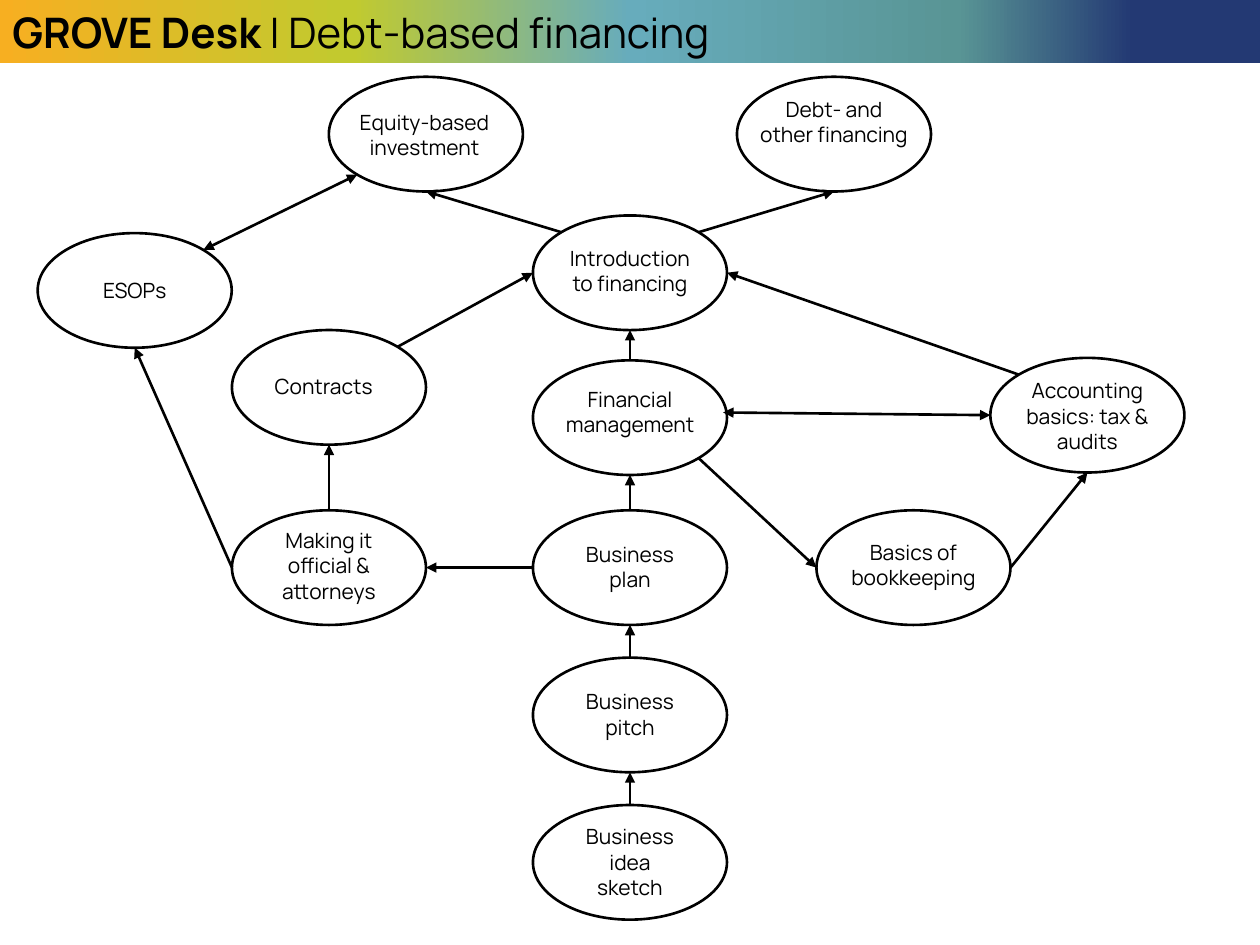
from copy import deepcopy
from math import sqrt

from lxml.etree import SubElement
from pptx import Presentation
from pptx.dml.color import RGBColor
from pptx.enum.shapes import MSO_CONNECTOR, MSO_SHAPE
from pptx.enum.text import MSO_ANCHOR, PP_ALIGN
from pptx.oxml.ns import qn
from pptx.util import Pt

SLIDE_W, SLIDE_H = 720, 540
OVAL_W, OVAL_H = 110.9, 65.5
LINE_H, INSET = 14.8, 3.6
INK = "000000"

HEADING = [("GROVE Desk ", True), ("| Debt-based financing", False)]
BAND = [(0, "F7AF21"), (0.28, "C1CA2F"), (0.5, "67ACBC"), (0.76, "599595"), (0.9, "233973")]

TOPICS = {
    "idea": ((360, 460), (360, 467.3, 71.3, 3), ["Business idea sketch"]),
    "pitch": ((360, 375.8), (360, 390.2, 71.3, 2), ["Business pitch"]),
    "plan": ((360, 291.6), (360, 306, 71.3, 2), ["Business plan"]),
    "intro": ((360, 123.1), (360, 136.8, 91.4, 2), ["Introduction to financing"]),
    "books": ((522, 291.6), (522, 304.6, 95.8, 2), ["Basics of bookkeeping"]),
    "official": ((188, 291.6), (188, 298.1, 83.5, 3), ["Making it official & attorneys"]),
    "accounting": ((621.4, 204.5), (621.4, 212.4, 91.4, 3), ["Accounting basics: tax & audits"]),
    "contracts": ((188, 188.6), (185, 210.2, 90.7, 1), ["Contracts"]),
    "equity": ((243.4, 43.9), (242.6, 59, 100.8, 2), ["Equity-based", "investment"]),
    "management": ((360, 205.9), (360, 217.4, 106.6, 2), ["Financial management"]),
    "debt": ((476.6, 43.9), (476.6, 51.8, 100.8, 3), ["Debt- and other financing"]),
    "esops": ((77, 133.2), (77, 154.8, 90.7, 1), ["ESOPs"]),
}

ONE_WAY, TWO_WAY = ("tailEnd",), ("headEnd", "tailEnd")
LINKS = [
    ("idea", "top", "pitch", "bottom", ONE_WAY),
    ("pitch", "top", "plan", "bottom", ONE_WAY),
    ("plan", "top", "management", "bottom", ONE_WAY),
    ("management", "top", "intro", "bottom", ONE_WAY),
    ("intro", "top right", "debt", "bottom", ONE_WAY),
    ("intro", "top left", "equity", "bottom", ONE_WAY),
    ("plan", "left", "official", "right", ONE_WAY),
    ("management", "bottom right", "books", "left", ONE_WAY),
    ("books", "right", "accounting", "bottom", ONE_WAY),
    ("official", "top", "contracts", "bottom", ONE_WAY),
    ("contracts", "top right", "intro", "left", ONE_WAY),
    ("accounting", "left", "management", "inner right", TWO_WAY),
    ("accounting", "top left", "intro", "right", ONE_WAY),
    ("equity", "bottom left", "esops", "top right", TWO_WAY),
    ("official", "left", "esops", "bottom", ONE_WAY),
]

DIAGONAL = 1 / sqrt(2)
SITES = {
    "top": (0, -1), "bottom": (0, 1), "left": (-1, 0), "right": (1, 0),
    "top left": (-DIAGONAL, -DIAGONAL), "top right": (DIAGONAL, -DIAGONAL),
    "bottom left": (-DIAGONAL, DIAGONAL), "bottom right": (DIAGONAL, DIAGONAL),
    "inner right": (0.96, -0.09),
}

FRAME = {"word_wrap": True, "margin_left": Pt(7.2), "margin_right": Pt(7.2),
         "margin_top": Pt(INSET), "margin_bottom": Pt(INSET)}
LABEL_FONT = {"name": "Manrope", "size": Pt(12), "bold": False}
HEADING_FONT = {"name": "Manrope", "size": Pt(24)}


def colour(value):
    return RGBColor.from_string(value)


def apply(target, values):
    for name, value in values.items():
        setattr(target, name, value)


def write(paragraph, wording, font):
    run = paragraph.add_run()
    run.text = wording
    apply(run.font, font)
    run.font.color.rgb = colour(INK)


def ink_line(line):
    line.color.rgb = colour(INK)
    line.width = Pt(1.5)


def add_heading(slide):
    band = slide.shapes.add_shape(MSO_SHAPE.RECTANGLE, 0, 0, Pt(SLIDE_W), Pt(36))
    band.shadow.inherit = False
    band.line.fill.background()
    band.fill.gradient()
    band.fill.gradient_angle = 0
    stops = band._element.spPr.find(qn("a:gradFill")).find(qn("a:gsLst"))
    for _ in range(len(BAND) - len(stops)):
        stops.append(deepcopy(stops[0]))
    for stop, (position, shade) in zip(band.fill.gradient_stops, BAND):
        stop.position = position
        stop.color.rgb = colour(shade)
    apply(band.text_frame, {**FRAME, "vertical_anchor": MSO_ANCHOR.MIDDLE})
    title = band.text_frame.paragraphs[0]
    title.alignment = PP_ALIGN.LEFT
    for wording, bold in HEADING:
        write(title, wording, {**HEADING_FONT, "bold": bold})


def add_topic(slide, oval_place, label_place, paragraphs):
    centre, top = oval_place
    oval = slide.shapes.add_shape(MSO_SHAPE.OVAL, Pt(centre - OVAL_W / 2), Pt(top),
                                  Pt(OVAL_W), Pt(OVAL_H))
    oval.shadow.inherit = False
    oval.fill.background()
    ink_line(oval.line)

    centre, top, width, lines = label_place
    label = slide.shapes.add_textbox(Pt(centre - width / 2), Pt(top), Pt(width),
                                     Pt(lines * LINE_H + 2 * INSET))
    apply(label.text_frame, FRAME)
    for index, wording in enumerate(paragraphs):
        paragraph = label.text_frame.add_paragraph() if index else label.text_frame.paragraphs[0]
        paragraph.alignment = PP_ALIGN.CENTER
        write(paragraph, wording, LABEL_FONT)


def site(topic, side):
    centre, top = TOPICS[topic][0]
    across, down = SITES[side]
    return Pt(centre + across * OVAL_W / 2), Pt(top + (1 + down) * OVAL_H / 2)


def add_link(slide, source, source_side, target, target_side, arrowheads):
    link = slide.shapes.add_connector(MSO_CONNECTOR.STRAIGHT, *site(source, source_side),
                                      *site(target, target_side))
    ink_line(link.line)
    outline = link.line._get_or_add_ln()
    for end in arrowheads:
        SubElement(outline, qn(f"a:{end}"), type="triangle")
    SubElement(link._element.spPr, qn("a:effectLst"))


def main():
    deck = Presentation()
    apply(deck, {"slide_width": Pt(SLIDE_W), "slide_height": Pt(SLIDE_H)})
    slide = deck.slides.add_slide(deck.slide_layouts[6])
    add_heading(slide)
    for topic in TOPICS.values():
        add_topic(slide, *topic)
    for link in LINKS:
        add_link(slide, *link)
    deck.save("out.pptx")


if __name__ == "__main__":
    main()
